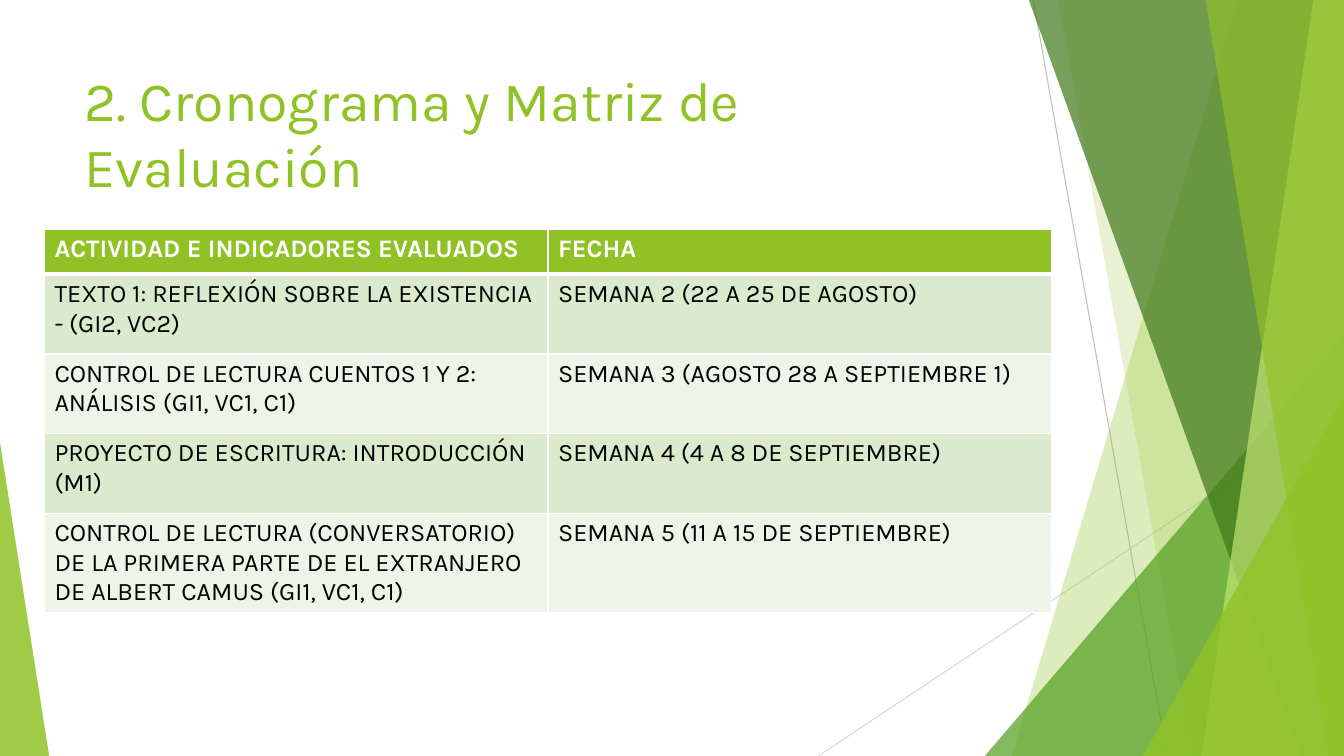
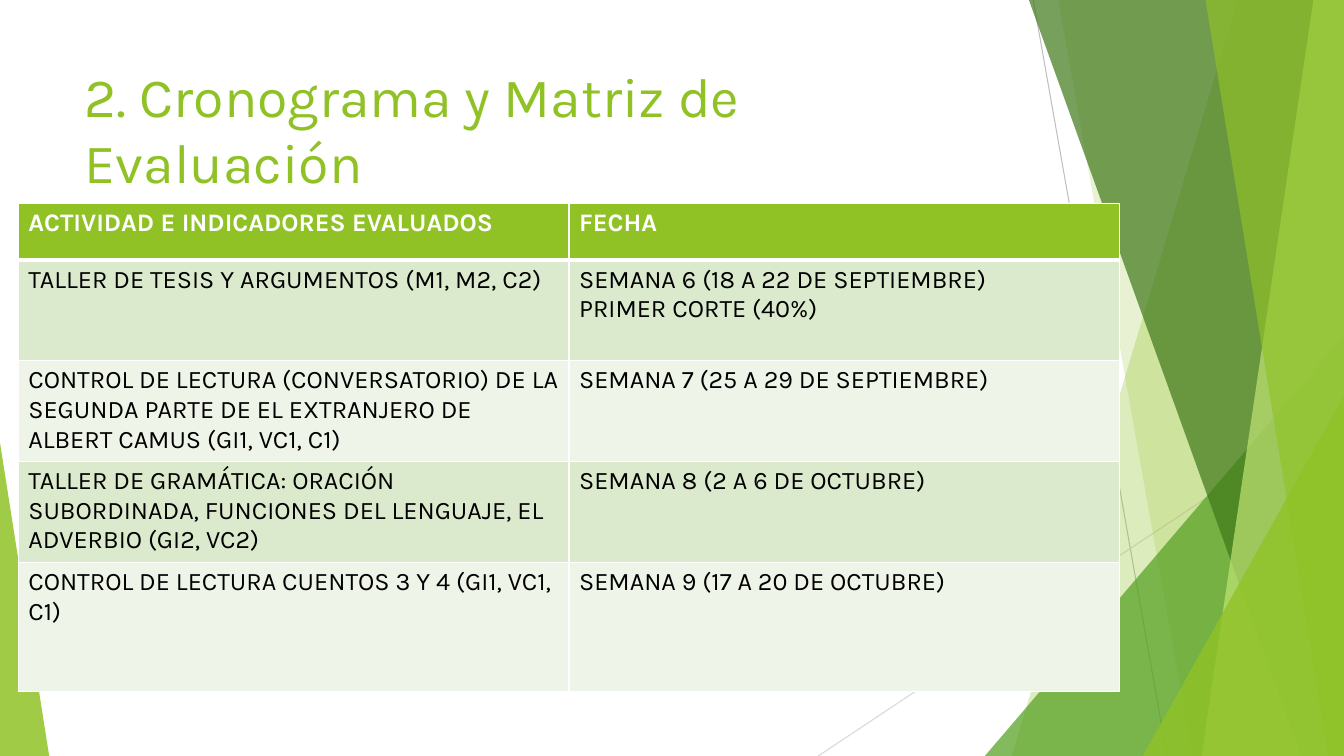
import lxml.etree
import pptx
import pptx.dml.color
import pptx.enum.shapes
import pptx.enum.text
import pptx.oxml.ns
import pptx.util

Cm, Pt = pptx.util.Cm, pptx.util.Pt
qn = pptx.oxml.ns.qn

WIDTH, HEIGHT = 33.87, 19.05
COLOURS = {
    "lime": "90C226", "green": "54A021", "forest": "3F7819", "pale": "C0E474",
    "grey": "BFBFBF", "silver": "D9D9D9", "white": "FFFFFF", "black": "000000",
    "odd_row": "DBE9CD", "even_row": "EEF4E8",
}
TITLE_FONT = {"name": "Karla", "size": Pt(39.6), "bold": False}
HEADER_FONT = {"name": "Karla", "size": Pt(18), "bold": True}
BODY_FONT = {"name": "Karla", "size": Pt(18), "bold": False}
TITLE_FRAME = {
    "word_wrap": True,
    "auto_size": pptx.enum.text.MSO_AUTO_SIZE.NONE,
    "vertical_anchor": pptx.enum.text.MSO_ANCHOR.MIDDLE,
}
TITLE = "2. Cronograma y Matriz de Evaluación"
HEADER = ("ACTIVIDAD E INDICADORES EVALUADOS", "FECHA")
SCHEDULES = [
    {
        "title_height": 3.28, "left": 1.12, "top": 5.79, "column": 12.69,
        "heights": [1.12, 2.01, 2.01, 2.01, 2.01],
        "rows": [
            HEADER,
            ("TEXTO 1: REFLEXIÓN SOBRE LA EXISTENCIA - (GI2, VC2)",
             "SEMANA 2 (22 A 25 DE AGOSTO)"),
            ("CONTROL DE LECTURA CUENTOS 1 Y 2: ANÁLISIS (GI1, VC1, C1)",
             "SEMANA 3 (AGOSTO 28 A SEPTIEMBRE 1)"),
            ("PROYECTO DE ESCRITURA: INTRODUCCIÓN (M1)",
             "SEMANA 4 (4 A 8 DE SEPTIEMBRE)"),
            ("CONTROL DE LECTURA (CONVERSATORIO) DE LA PRIMERA PARTE "
             "DE EL EXTRANJERO DE ALBERT CAMUS (GI1, VC1, C1)",
             "SEMANA 5 (11 A 15 DE SEPTIEMBRE)"),
        ],
    },
    {
        "title_height": 3.07, "left": 0.46, "top": 5.13, "column": 13.88,
        "heights": [1.42, 2.54, 2.54, 2.54, 3.25],
        "rows": [
            HEADER,
            ("TALLER DE TESIS Y ARGUMENTOS (M1, M2, C2)",
             "SEMANA 6 (18 A 22 DE SEPTIEMBRE)\nPRIMER CORTE (40%)"),
            ("CONTROL DE LECTURA (CONVERSATORIO) DE LA SEGUNDA PARTE "
             "DE EL EXTRANJERO DE ALBERT CAMUS (GI1, VC1, C1)",
             "SEMANA 7 (25 A 29 DE SEPTIEMBRE)"),
            ("TALLER DE GRAMÁTICA: ORACIÓN SUBORDINADA, FUNCIONES DEL LENGUAJE, "
             "EL ADVERBIO (GI2, VC2)",
             "SEMANA 8 (2 A 6 DE OCTUBRE)"),
            ("CONTROL DE LECTURA CUENTOS 3 Y 4 (GI1, VC1, C1)",
             "SEMANA 9 (17 A 20 DE OCTUBRE)"),
        ],
    },
]


def rgb(colour):
    return pptx.dml.color.RGBColor.from_string(COLOURS[colour])


def apply(target, values):
    for name, value in values.items():
        setattr(target, name, value)


class Schedule:
    """Draw the slides of the evaluation schedule in one shared style."""

    def __init__(self):
        self.deck = pptx.Presentation()
        apply(self.deck, {"slide_width": Cm(WIDTH), "slide_height": Cm(HEIGHT)})

    def add_page(self):
        self.page = self.deck.slides.add_slide(self.deck.slide_layouts[5])
        self.backdrop = self.page.shapes.add_group_shape().shapes
        self.line(26.04, 0, 29.41, HEIGHT, "grey")
        self.line(WIDTH, 10.24, 20.62, HEIGHT, "silver")
        self.band(31.19, 25.5, "lime", 30)
        self.band(26.67, 30.05, "lime", 20)
        self.triangle(24.82, 8.46, WIDTH, 1, "green", 72)
        self.band(25.93, 32.79, "forest", 70)
        self.band(33.1, 30.28, "pale", 70)
        self.band(30.38, 33.48, "lime", 65)
        self.triangle(28.8, 9.98, WIDTH, 1, "lime", 80)
        self.triangle(0, 11.15, 1.24, 0, "lime", 85)

    def line(self, x1, y1, x2, y2, colour):
        line = self.backdrop.add_connector(
            pptx.enum.shapes.MSO_CONNECTOR.STRAIGHT, Cm(x1), Cm(y1), Cm(x2), Cm(y2))
        line.line.color.rgb = rgb(colour)
        line.line.width = Pt(0.75)
        lxml.etree.SubElement(line._element.spPr, qn("a:effectLst"))

    def paint(self, shape, colour, opacity):
        shape.shadow.inherit = False
        shape.fill.solid()
        shape.fill.fore_color.rgb = rgb(colour)
        tint = shape._element.spPr.find(".//" + qn("a:srgbClr"))
        lxml.etree.SubElement(tint, qn("a:alpha"), val=str(opacity * 1000))
        shape.line.fill.background()

    def band(self, top_x, bottom_x, colour, opacity):
        corners = [(WIDTH, 0), (WIDTH, HEIGHT), (bottom_x, HEIGHT)]
        outline = self.backdrop.build_freeform(Cm(top_x), Cm(0))
        outline.add_line_segments([(Cm(x), Cm(y)) for x, y in corners], close=True)
        self.paint(outline.convert_to_shape(), colour, opacity)

    def triangle(self, left, top, right, apex, colour, opacity):
        shape = self.backdrop.add_shape(
            pptx.enum.shapes.MSO_SHAPE.ISOSCELES_TRIANGLE,
            Cm(left), Cm(top), Cm(right - left), Cm(HEIGHT - top))
        shape.adjustments[0] = apex
        self.paint(shape, colour, opacity)

    def text(self, frame, words, font, colour):
        frame.text = words
        for para in frame.paragraphs:
            para.alignment = pptx.enum.text.PP_ALIGN.LEFT
            for span in para.runs:
                apply(span.font, font)
                span.font.color.rgb = rgb(colour)

    def title(self, words, height):
        box = self.page.shapes.title
        apply(box, {"left": Cm(1.88), "top": Cm(1.7),
                    "width": Cm(23.88), "height": Cm(height)})
        apply(box.text_frame, TITLE_FRAME)
        self.text(box.text_frame, words, TITLE_FONT, "lime")

    def borders(self, cell, widths):
        properties = cell._tc.get_or_add_tcPr()
        for side, width in widths.items():
            edge = lxml.etree.SubElement(
                properties, qn("a:ln" + side), w=str(Pt(width)))
            fill = lxml.etree.SubElement(edge, qn("a:solidFill"))
            lxml.etree.SubElement(fill, qn("a:srgbClr"), val=COLOURS["white"])

    def table(self, left, top, column, heights, rows):
        count = len(rows[0])
        table = self.page.shapes.add_table(
            len(rows), count, Cm(left), Cm(top),
            Cm(column * count), Cm(sum(heights))).table
        for each in table.columns:
            each.width = Cm(column)
        for r, (height, texts) in enumerate(zip(heights, rows)):
            table.rows[r].height = Cm(height)
            if r == 0:
                fill, font, ink = "lime", HEADER_FONT, "white"
            else:
                fill = "odd_row" if r % 2 else "even_row"
                font, ink = BODY_FONT, "black"
            widths = {"L": 1, "R": 1, "T": 3 if r == 1 else 1, "B": 3 if r == 0 else 1}
            for c, words in enumerate(texts):
                cell = table.cell(r, c)
                self.borders(cell, widths)
                cell.fill.solid()
                cell.fill.fore_color.rgb = rgb(fill)
                self.text(cell.text_frame, words, font, ink)


def main():
    schedule = Schedule()
    for part in SCHEDULES:
        schedule.add_page()
        schedule.title(TITLE, part["title_height"])
        schedule.table(part["left"], part["top"], part["column"],
                       part["heights"], part["rows"])
    schedule.deck.save("out.pptx")


if __name__ == "__main__":
    main()
